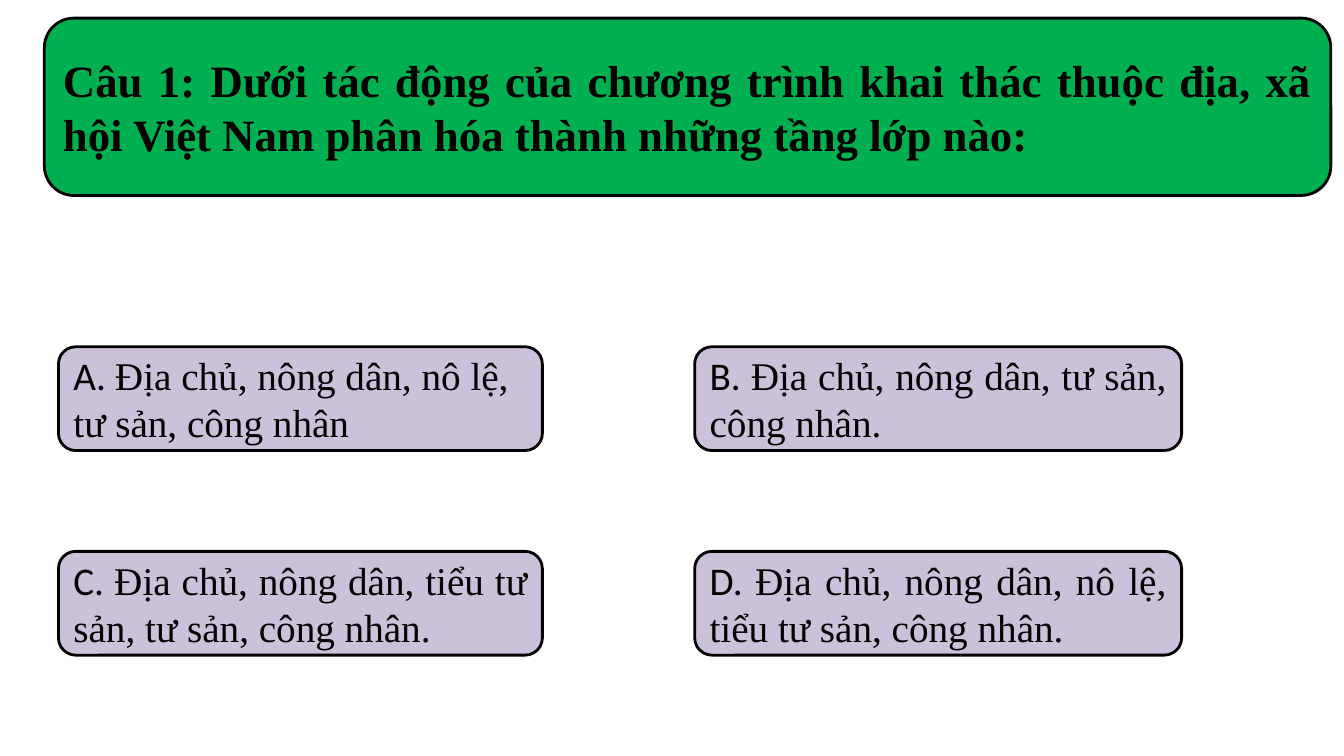
"""Build a quiz slide with one question and four answer boxes."""
from pptx import Presentation
from pptx.dml.color import RGBColor
from pptx.enum.shapes import MSO_SHAPE
from pptx.enum.text import MSO_ANCHOR, PP_ALIGN
from pptx.util import Pt

ROUNDED = MSO_SHAPE.ROUNDED_RECTANGLE
MIDDLE = MSO_ANCHOR.MIDDLE
LEFT = PP_ALIGN.LEFT
JUSTIFY = PP_ALIGN.JUSTIFY

BLACK = RGBColor(0x00, 0x00, 0x00)
GREEN = RGBColor(0x00, 0xB0, 0x50)
LILAC = RGBColor(0xCC, 0xC1, 0xDA)

PX = 9144

quiz = Presentation()
quiz.slide_width = 1333 * PX
quiz.slide_height = 750 * PX
slide = quiz.slides.add_slide(quiz.slide_layouts[6])


def add_box(text, *, box, fill, size, label="", bold=False, align=JUSTIFY):
    panel = slide.shapes.add_shape(ROUNDED, *(length * PX for length in box))
    panel.shadow.inherit = False
    panel.fill.solid()
    panel.fill.fore_color.rgb = fill
    panel.line.color.rgb = BLACK
    panel.line.width = Pt(2)
    frame = panel.text_frame
    frame.word_wrap = True
    frame.vertical_anchor = MIDDLE
    paragraph = frame.paragraphs[0]
    paragraph.alignment = align
    for part, font_name in ((label, "Calibri"), (text, "Times New Roman")):
        if part:
            run = paragraph.add_run()
            run.text = part
            run.font.name = font_name
            run.font.size = Pt(size)
            run.font.bold = bold
            run.font.color.rgb = BLACK


add_box(
    "Câu 1: Dưới tác động của chương trình khai thác thuộc địa, "
    "xã hội Việt Nam phân hóa thành những tầng lớp nào:",
    box=(44, 18, 1276, 176), fill=GREEN, size=32, bold=True,
)

answers = [
    ("A. ", "Địa chủ, nông dân, nô lệ, tư sản, công nhân", LEFT),
    ("B. ", "Địa chủ, nông dân, tư sản, công nhân.", JUSTIFY),
    ("C. ", "Địa chủ, nông dân, tiểu tư sản, tư sản, công nhân.", JUSTIFY),
    ("D. ", "Địa chủ, nông dân, nô lệ, tiểu tư sản, công nhân.", JUSTIFY),
]
columns = [(58, 480), (689, 483)]

for index, (label, answer, align) in enumerate(answers):
    row, column = divmod(index, 2)
    left, width = columns[column]
    add_box(answer, label=label, box=(left, 344 + 203 * row, width, 103),
            fill=LILAC, size=28, align=align)

quiz.save("out.pptx")
